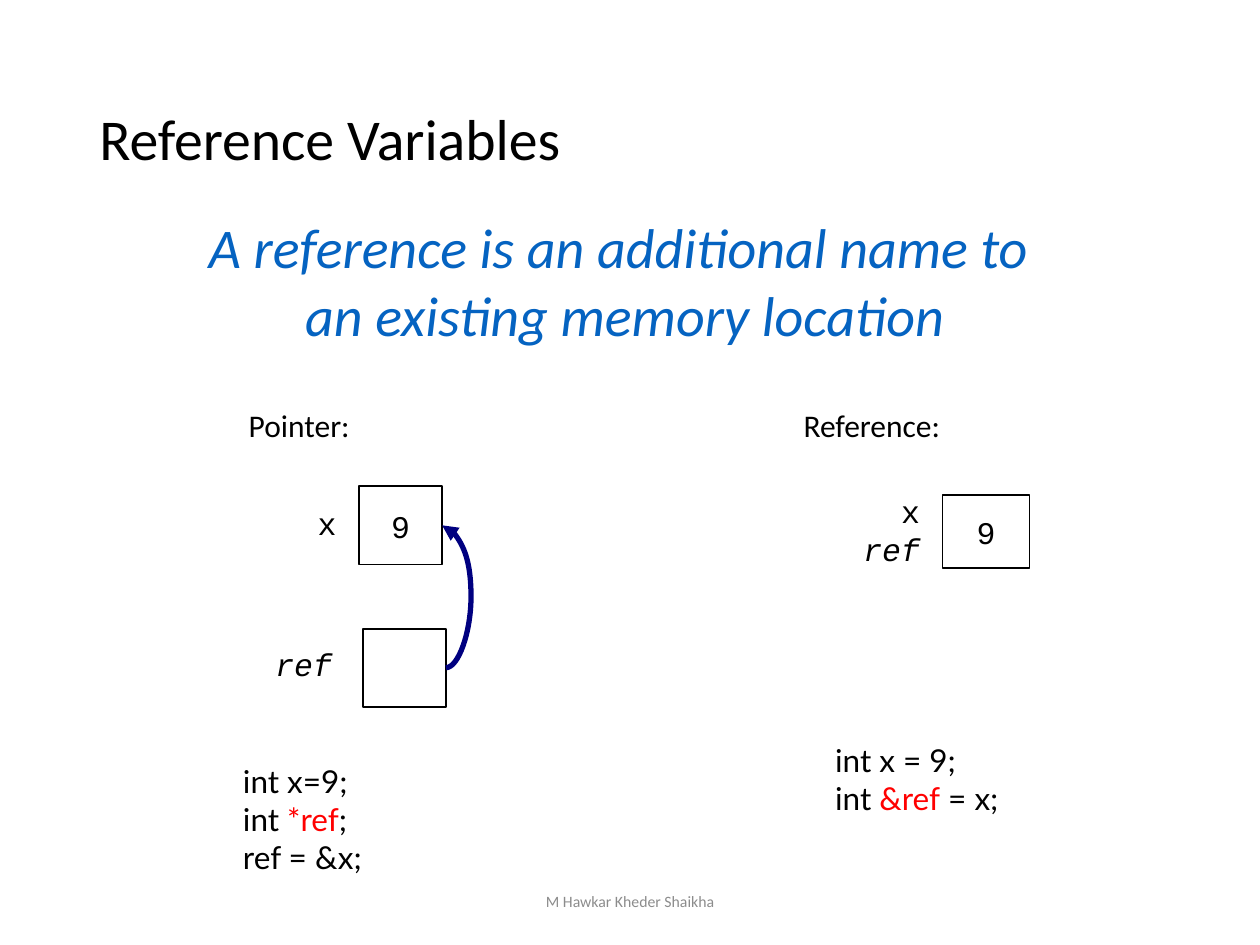
from lxml import etree
from pptx import Presentation
from pptx.dml.color import RGBColor
from pptx.enum.shapes import MSO_CONNECTOR, MSO_SHAPE
from pptx.enum.text import MSO_ANCHOR, PP_ALIGN
from pptx.oxml.ns import qn
from pptx.util import Inches, Pt

LEFT, CENTER, RIGHT = PP_ALIGN.LEFT, PP_ALIGN.CENTER, PP_ALIGN.RIGHT
TOP, MIDDLE = MSO_ANCHOR.TOP, MSO_ANCHOR.MIDDLE
RECTANGLE, CURVE = MSO_SHAPE.RECTANGLE, MSO_CONNECTOR.CURVE

BLACK, WHITE, RED = "000000", "FFFFFF", "FF0000"
BLUE, NAVY, GRAY = "0563C1", "000080", "8C8C8C"
BODY, MONO, CODE = "Calibri", "Courier New", "Lato"
BULGE = 0.2

# Each paragraph is a list of (text, colour, italic) runs.
X = [("x", BLACK, False)]
REF = [("ref", BLACK, True)]
NINE = [("9", BLACK, False)]

TEXTS = [
    ((0.69, 0.4, 8.62, 1.45), [[("Reference Variables", BLACK, False)]],
     BODY, 33, LEFT, MIDDLE, True, 0.9),
    ((0.67, 1.64, 8.58, 1.27),
     [[("A reference is an additional name to ", BLUE, True)],
      [("an existing memory location", BLUE, True)]],
     BODY, 32, CENTER, TOP, True, 1.0),
    ((2.39, 3.95, 0.41, 0.43), [X], MONO, 18, CENTER, TOP, True, 1.0),
    ((2.03, 5.07, 0.76, 0.43), [REF], MONO, 18, CENTER, TOP, True, 1.0),
    ((1.75, 3.17, 1.25, 0.43), [[("Pointer:", BLACK, False)]],
     BODY, 18, CENTER, TOP, False, 1.0),
    ((6.67, 3.86, 0.73, 0.77), [X, REF], MONO, 18, RIGHT, TOP, True, 1.0),
    ((6.1, 3.17, 1.64, 0.43), [[("Reference:", BLACK, False)]],
     BODY, 18, CENTER, TOP, False, 1.0),
    ((1.83, 6, 1.22, 1),
     [[("int x=9;", BLACK, False)],
      [("int ", BLACK, False), ("*ref", RED, False), (";", BLACK, False)],
      [("ref = &x;", BLACK, False)]],
     CODE, 18, LEFT, TOP, False, 1.0),
    ((6.53, 5.83, 1.58, 0.7),
     [[("int x = 9;", BLACK, False)],
      [("int ", BLACK, False), ("&ref", RED, False), (" = x;", BLACK, False)]],
     CODE, 18, LEFT, TOP, False, 1.0),
    ((3.31, 6.95, 3.38, 0.4), [[("M Hawkar Kheder Shaikha", GRAY, False)]],
     BODY, 9, CENTER, MIDDLE, True, 1.0),
]

CELLS = {
    "pointer x": ((2.85, 3.86, 0.66, 0.62), [NINE]),
    "pointer ref": ((2.88, 4.99, 0.66, 0.62), []),
    "reference x": ((7.48, 3.93, 0.69, 0.58), [NINE]),
}


def color(value):
    return RGBColor.from_string(value)


def write(frame, paragraphs, font, size, align, anchor, wrap, spacing):
    frame.word_wrap = wrap
    frame.vertical_anchor = anchor
    for index, runs in enumerate(paragraphs):
        paragraph = frame.add_paragraph() if index else frame.paragraphs[0]
        paragraph.alignment = align
        paragraph.line_spacing = spacing
        for text, tint, italic in runs:
            run = paragraph.add_run()
            run.text = text
            run.font.name = font
            run.font.size = Pt(size)
            run.font.italic = italic
            run.font.color.rgb = color(tint)


def add_cell(slide, place, paragraphs):
    cell = slide.shapes.add_shape(RECTANGLE, *map(Inches, place))
    cell.shadow.inherit = False
    cell.fill.solid()
    cell.fill.fore_color.rgb = color(WHITE)
    cell.line.color.rgb = color(BLACK)
    cell.line.width = Pt(1)
    write(cell.text_frame, paragraphs, MONO, 18, CENTER, MIDDLE, False, 1.0)
    return cell


def add_pointer(slide, source, target):
    arrow = slide.shapes.add_connector(CURVE, 0, 0, 0, 0)
    arrow.begin_connect(source, 3)
    arrow.end_connect(target, 3)
    arrow.line.color.rgb = color(NAVY)
    arrow.line.width = Pt(3)
    properties = arrow.element.spPr
    etree.SubElement(arrow.line._get_or_add_ln(), qn("a:tailEnd"), type="triangle")
    etree.SubElement(properties, qn("a:effectLst"))
    adjustments = properties.find(qn("a:prstGeom")).find(qn("a:avLst"))
    bend = round(-Inches(BULGE) / arrow.width * 100000)
    etree.SubElement(adjustments, qn("a:gd"), name="adj1", fmla=f"val {bend}")


def main():
    deck = Presentation()
    deck.slide_width, deck.slide_height = Inches(10), Inches(7.5)
    slide = deck.slides.add_slide(deck.slide_layouts[6])
    cells = {name: add_cell(slide, *cell) for name, cell in CELLS.items()}
    add_pointer(slide, cells["pointer ref"], cells["pointer x"])
    for place, *content in TEXTS:
        box = slide.shapes.add_textbox(*map(Inches, place))
        write(box.text_frame, *content)
    deck.save("out.pptx")


if __name__ == "__main__":
    main()
